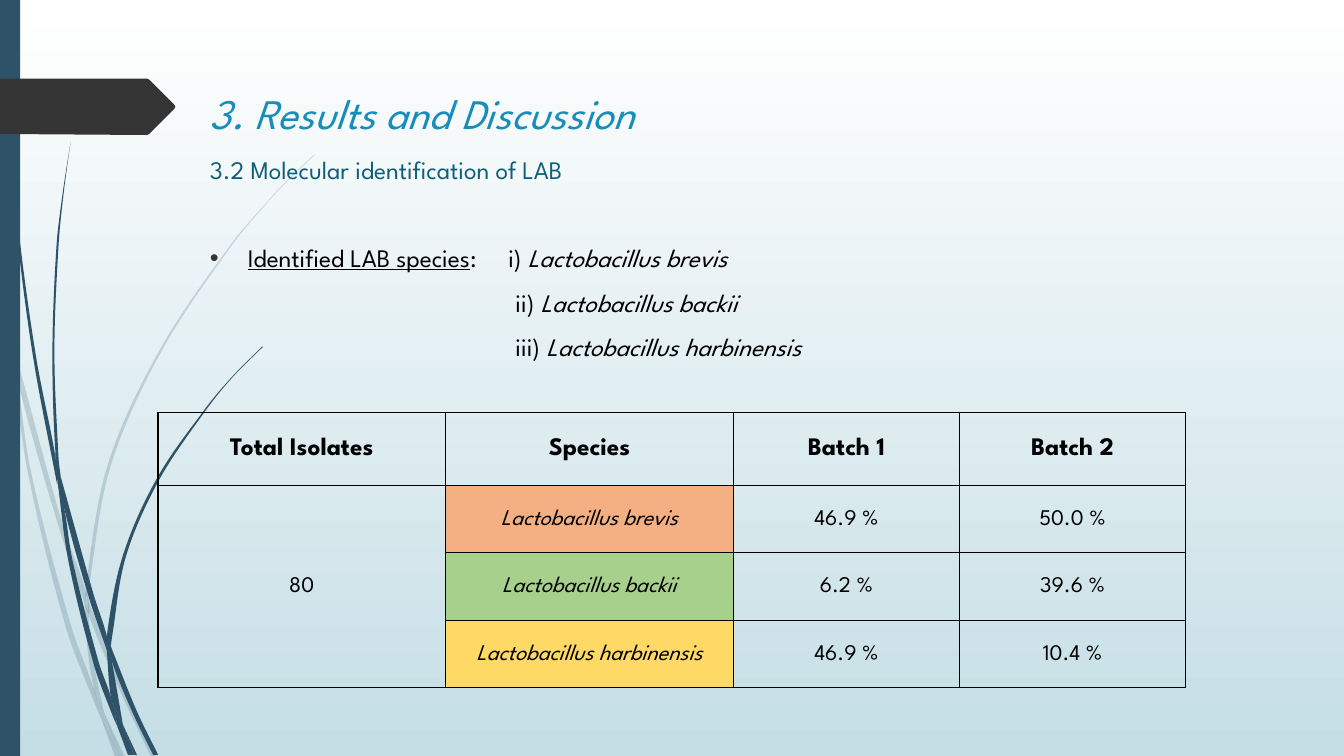
from dataclasses import dataclass
from math import dist
from typing import NamedTuple

from lxml.etree import SubElement
from pptx import Presentation
from pptx.dml.color import RGBColor
from pptx.enum.shapes import MSO_SHAPE as Preset
from pptx.enum.text import MSO_ANCHOR as Anchor, PP_ALIGN as Align
from pptx.oxml.ns import qn
from pptx.util import Cm, Pt

Point = tuple[float, float]


@dataclass(frozen=True)
class Theme:
    font: str = "League Spartan"
    stem: str = "2E5369"
    tag: str = "353535"
    title: str = "178DBB"
    subtitle: str = "0F5E7C"
    ink: str = "000000"
    sky_top: str = "FFFFFF"
    sky_bottom: str = "C5DEE5"
    title_size: int = 30
    body_size: int = 18
    cell_size: int = 16
    pale: int = 20


class Blade(NamedTuple):
    left: list[Point]
    right: list[Point]


class Segment(NamedTuple):
    end: Point
    controls: tuple[Point, ...] = ()


class Span(NamedTuple):
    text: str
    italic: bool = False
    underline: bool = False


class Line(NamedTuple):
    spans: list[Span]
    color: str
    space_before: float = 10
    margin: float = 0
    bullet: bool = False


class Species(NamedTuple):
    name: str
    batch_1: str
    batch_2: str
    color: str


THEME = Theme()
GRID = 0.0254
TAB_STOP = 7.52
LIST_MARGIN = 7.7
BULLET_MARGIN = 0.96

PALE_BLADES = [
    Blade([(0, 282), (0, 299), (10, 344), (11, 350)], [(0, 282), (9, 322), (11, 350)]),
    Blade([(14, 345), (17, 376), (58, 522), (84, 599)], [(14, 345), (62, 520), (85, 586), (84, 599)]),
    Blade([(88, 596), (88, 610), (123, 694), (150, 751)], [(88, 596), (92, 607), (127, 692), (155, 751)]),
    Blade([(105, 711), (119, 751)], [(105, 711), (124, 751)]),
    Blade([(11, 350), (28, 470), (65, 621), (92, 693), (101, 714)],
          [(11, 350), (17, 376), (31, 469), (70, 619), (93, 683), (99, 707), (101, 714)]),
    Blade([(84, 599), (87, 646), (93, 683), (96, 692), (105, 711)],
          [(84, 599), (88, 608), (88, 610), (91, 646), (103, 706), (105, 711)]),
    Blade([(312, 153), (289, 175), (268, 197), (228, 244), (158, 348), (107, 461), (85, 584), (88, 596)],
          [(312, 154), (290, 175), (268, 198), (229, 245), (160, 349), (110, 462), (88, 584), (88, 596)]),
    Blade([(101, 714), (114, 751)], [(101, 714), (119, 751)]),
    Blade([(85, 586), (84, 599), (88, 610)], [(85, 586), (88, 596), (88, 610)]),
    Blade([(93, 683), (99, 707), (101, 714), (119, 751)], [(93, 683), (96, 692), (105, 711), (119, 751)]),
]
DARK_BLADES = [
    Blade([(3, 0), (4, 48), (7, 110), (17, 233), (33, 355), (56, 477), (57, 481)],
          [(4, 0), (5, 48), (8, 109), (19, 232), (36, 355), (55, 453), (57, 481)]),
    Blade([(60, 472), (64, 505), (88, 592), (106, 645)], [(60, 472), (93, 590), (106, 631), (106, 645)]),
    Blade([(110, 641), (111, 656), (132, 708), (152, 749)], [(110, 641), (113, 649), (136, 706), (157, 749)]),
    Blade([(57, 477), (68, 557), (93, 659), (111, 708), (117, 722)],
          [(57, 477), (64, 505), (72, 556), (98, 657), (110, 691), (117, 722)]),
    Blade([(70, 141), (62, 193), (56, 245), (52, 349), (55, 449), (60, 472)],
          [(70, 141), (63, 193), (58, 245), (54, 349), (58, 453), (60, 472)]),
    Blade([(122, 719), (133, 749)], [(122, 719), (136, 749)]),
    Blade([(55, 449), (55, 453), (57, 477), (64, 505)], [(55, 449), (60, 472), (64, 505)]),
    Blade([(260, 344), (231, 373), (204, 405), (156, 474), (122, 551), (106, 631), (110, 641)],
          [(261, 344), (231, 374), (205, 406), (158, 476), (125, 552), (111, 633), (110, 641)]),
    Blade([(117, 722), (127, 749)], [(117, 722), (131, 749)]),
    Blade([(106, 645), (110, 691), (116, 706), (122, 719)], [(106, 645), (109, 651), (111, 656), (122, 719)]),
    Blade([(106, 631), (106, 645), (111, 656)], [(106, 631), (110, 641), (111, 656)]),
    Blade([(110, 691), (116, 717), (117, 722), (130, 749)], [(110, 691), (116, 706), (122, 719), (133, 749)]),
]
TAG = [(0, 78), (146, 78), (148, 79), (173, 104), (174, 106), (173, 108), (148, 133), (146, 134), (0, 133)]

SPECIES = [
    Species("Lactobacillus brevis", "46.9 %", "50.0 %", "F4B083"),
    Species("Lactobacillus backii", "6.2 %", "39.6 %", "A8D08D"),
    Species("Lactobacillus harbinensis", "46.9 %", "10.4 %", "FFD966"),
]
TITLE = [Line([Span("3. Results and Discussion", italic=True)], THEME.title, 0)]
BODY = [
    Line([Span("3.2 Molecular identification of LAB")], THEME.subtitle),
    Line([Span("Identified LAB species", underline=True), Span(":\ti) "), Span(SPECIES[0].name, italic=True)],
         THEME.ink, 41.7, BULLET_MARGIN, True),
    Line([Span("ii) "), Span(SPECIES[1].name, italic=True)], THEME.ink, margin=LIST_MARGIN),
    Line([Span("iii) "), Span(SPECIES[2].name, italic=True)], THEME.ink, margin=LIST_MARGIN),
]


def rgb(color: str) -> RGBColor:
    return RGBColor.from_string(color)


def paint(shape, color: str, opacity: int = 100) -> None:
    shape.shadow.inherit = False
    shape.fill.solid()
    shape.fill.fore_color.rgb = rgb(color)
    shape.line.fill.background()
    if opacity < 100:
        srgb = shape.fill._xPr.find(".//" + qn("a:srgbClr"))
        SubElement(srgb, qn("a:alpha"), val=str(opacity * 1000))


def curve(knots: list[Point]) -> list[Segment]:
    padded = [knots[0], *knots, knots[-1]]
    slopes = [((c[0] - a[0]) / (dist(a, b) + dist(b, c)), (c[1] - a[1]) / (dist(a, b) + dist(b, c)))
              for a, b, c in zip(padded, padded[1:], padded[2:])]
    segments = []
    for start, end, out, into in zip(knots, knots[1:], slopes, slopes[1:]):
        reach = dist(start, end) / 3
        controls = ((start[0] + out[0] * reach, start[1] + out[1] * reach),
                    (end[0] - into[0] * reach, end[1] - into[1] * reach))
        segments.append(Segment(end, controls))
    return segments


def blade_segments(blade: Blade) -> list[Segment]:
    tip = [] if blade.left[-1] == blade.right[-1] else [Segment(blade.right[-1])]
    return curve(blade.left) + tip + curve(blade.right[::-1])


def to_slide(point: Point) -> tuple[Cm, Cm]:
    return Cm(GRID * point[0]), Cm(GRID * point[1])


def add_outline(slide, start: Point, segments: list[Segment], color: str, opacity: int = 100) -> None:
    builder = slide.shapes.build_freeform(*to_slide(start))
    builder.add_line_segments([to_slide(segment.end) for segment in segments], close=True)
    shape = builder.convert_to_shape()
    paint(shape, color, opacity)
    for step, segment in zip(list(shape._element.iter(qn("a:lnTo"))), segments):
        if segment.controls:
            step.tag = qn("a:cubicBezTo")
            for position, control in enumerate(segment.controls):
                x, y = to_slide(control)
                point = SubElement(step, qn("a:pt"), x=str(x - shape.left), y=str(y - shape.top))
                step.insert(position, point)


def style_run(run, size: int, color: str, italic: bool = False, bold: bool = False) -> None:
    run.font.name = THEME.font
    run.font.size = Pt(size)
    run.font.color.rgb = rgb(color)
    run.font.italic = italic
    run.font.bold = bold


def add_bullet(paragraph) -> None:
    properties = paragraph._p.get_or_add_pPr()
    properties.set("indent", str(-Cm(BULLET_MARGIN)))
    SubElement(SubElement(properties, qn("a:buClr")), qn("a:srgbClr"), val=THEME.tag)
    SubElement(properties, qn("a:buFont"), typeface="Arial")
    SubElement(properties, qn("a:buChar"), char="•")
    SubElement(SubElement(properties, qn("a:tabLst")), qn("a:tab"), pos=str(Cm(TAB_STOP)), algn="l")


def add_text(slide, box: tuple[float, ...], lines: list[Line], size: int) -> None:
    text_frame = slide.shapes.add_textbox(*map(Cm, box)).text_frame
    text_frame.word_wrap = True
    for index, line in enumerate(lines):
        paragraph = text_frame.add_paragraph() if index else text_frame.paragraphs[0]
        paragraph.space_before = Pt(line.space_before)
        paragraph._p.get_or_add_pPr().set("marL", str(Cm(line.margin)))
        if line.bullet:
            add_bullet(paragraph)
        for span in line.spans:
            run = paragraph.add_run()
            run.text = span.text
            style_run(run, size, line.color, span.italic)
            run.font.underline = span.underline


def fill_cell(cell, text: str, size: int, bold: bool, italic: bool, color: str | None) -> None:
    cell.text_frame.text = text
    cell.vertical_anchor = Anchor.MIDDLE
    cell.margin_left = cell.margin_right = Cm(0.18)
    cell.margin_top = cell.margin_bottom = 0
    paragraph = cell.text_frame.paragraphs[0]
    paragraph.alignment = Align.CENTER
    paragraph.line_spacing = 1.07
    paragraph.space_after = Pt(8)
    for run in paragraph.runs:
        style_run(run, size, THEME.ink, italic, bold)
    properties = cell._tc.get_or_add_tcPr()
    for side in ("a:lnL", "a:lnR", "a:lnT", "a:lnB"):
        border = SubElement(properties, qn(side), w=str(Pt(1)))
        SubElement(SubElement(border, qn("a:solidFill")), qn("a:srgbClr"), val=THEME.ink)
    if color:
        cell.fill.solid()
        cell.fill.fore_color.rgb = rgb(color)
    else:
        cell.fill.background()


def add_species_table(slide) -> None:
    rows = [("Total Isolates", "Species", "Batch 1", "Batch 2")]
    rows += [("" if index else "80", *species[:3]) for index, species in enumerate(SPECIES)]
    table = slide.shapes.add_table(len(rows), 4, Cm(3.98), Cm(10.4), Cm(25.9), Cm(6.92)).table
    table.first_row = table.horz_banding = False
    for column, width in zip(table.columns, (7.25, 7.25, 5.7, 5.7)):
        column.width = Cm(width)
    for row, height in zip(table.rows, (1.83, 1.7, 1.7, 1.7)):
        row.height = Cm(height)
    for r, row in enumerate(rows):
        for c, text in enumerate(row):
            named = r > 0 and c == 1
            size = THEME.cell_size if r else THEME.body_size
            fill_cell(table.cell(r, c), text, size, r == 0, named, SPECIES[r - 1].color if named else None)
    table.cell(1, 0).merge(table.cell(len(SPECIES), 0))


def main() -> None:
    presentation = Presentation()
    presentation.slide_width, presentation.slide_height = Cm(33.87), Cm(19.05)
    slide = presentation.slides.add_slide(presentation.slide_layouts[6])
    sky = slide.background.fill
    sky.gradient()
    sky.gradient_angle = 270
    for stop, color in zip(sky.gradient_stops, (THEME.sky_top, THEME.sky_bottom)):
        stop.color.rgb = rgb(color)
    for blades, opacity in ((PALE_BLADES, THEME.pale), (DARK_BLADES, 100)):
        for blade in blades:
            add_outline(slide, blade.left[0], blade_segments(blade), THEME.stem, opacity)
    paint(slide.shapes.add_shape(Preset.RECTANGLE, 0, 0, Cm(0.51), Cm(19.05)), THEME.stem)
    add_outline(slide, TAG[0], [Segment(corner) for corner in TAG[1:]], THEME.tag)
    add_text(slide, (5.04, 2.08, 24.77, 3.56), TITLE, THEME.title_size)
    add_text(slide, (5.04, 3.76, 28.4, 14.45), BODY, THEME.body_size)
    add_species_table(slide)
    presentation.save("out.pptx")


if __name__ == "__main__":
    main()
